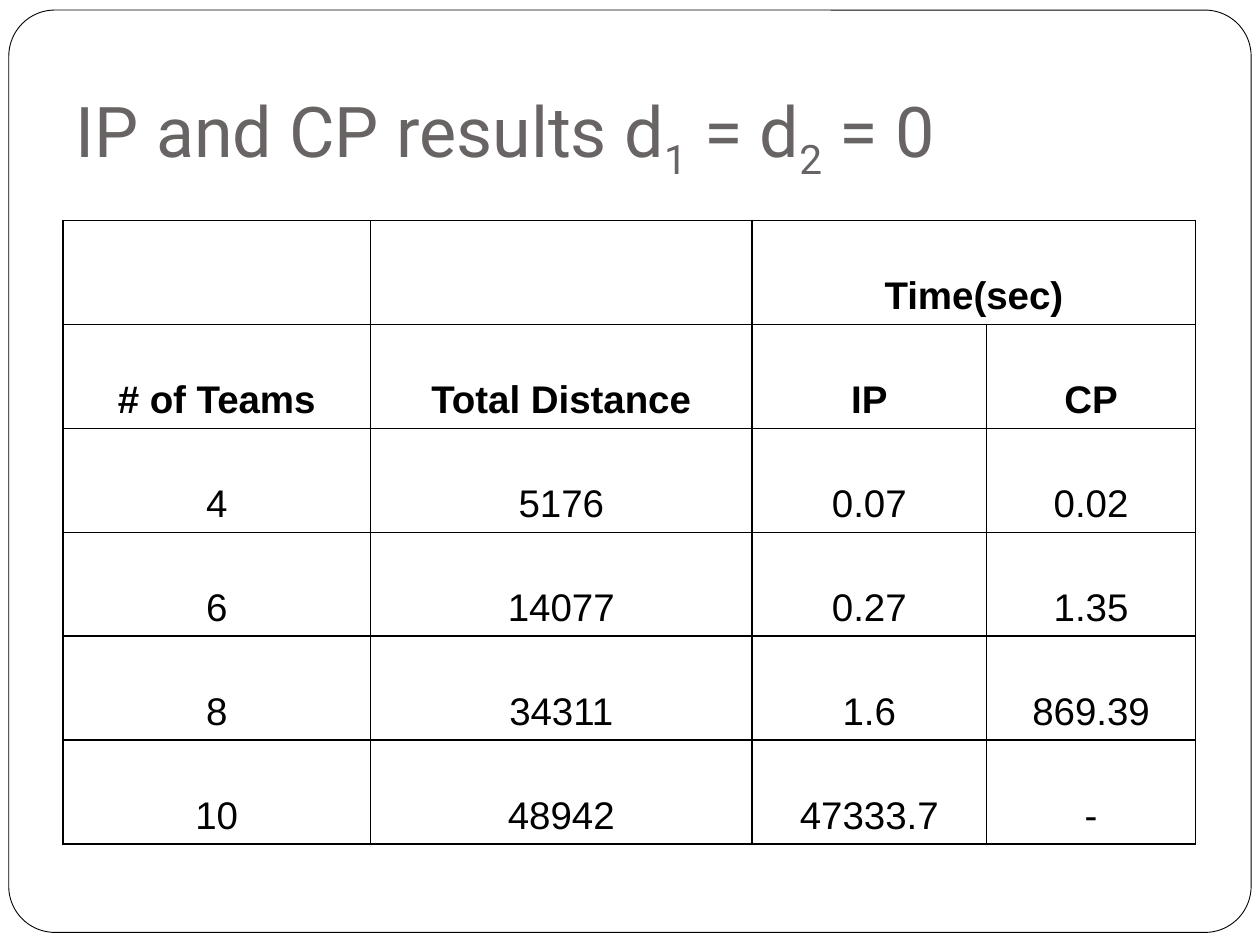
from typing import NamedTuple

from lxml import etree
from pptx import Presentation
from pptx.dml.color import RGBColor
from pptx.enum import shapes, text
from pptx.oxml import ns
from pptx.util import Inches, Pt

BLACK = RGBColor(0x00, 0x00, 0x00)
WHITE = RGBColor(0xFF, 0xFF, 0xFF)
GREY = RGBColor(0x69, 0x64, 0x64)


class Part(NamedTuple):
    words: str
    sub: bool = False


class Row(NamedTuple):
    cells: tuple[str, ...]
    bold: bool = False


TITLE = (
    Part("IP and CP results d"), Part("1", True),
    Part(" = d"), Part("2", True), Part(" = 0"),
)
WIDTHS = (2.44, 3.03, 1.86, 1.66)
ROWS = (
    Row(("", "", "Time(sec)", ""), True),
    Row(("# of Teams", "Total Distance", "IP", "CP"), True),
    Row(("4", "5176", "0.07", "0.02")),
    Row(("6", "14077", "0.27", "1.35")),
    Row(("8", "34311", "1.6", "869.39")),
    Row(("10", "48942", "47333.7", "-")),
)


def add_frame(slide) -> None:
    """Draw the rounded page border behind everything else."""
    frame = slide.shapes.add_shape(
        shapes.MSO_SHAPE.ROUNDED_RECTANGLE,
        Inches(0.07), Inches(0.08), Inches(9.86), Inches(7.32))
    frame.adjustments[0] = 0.05
    frame.shadow.inherit = False
    frame.fill.solid()
    frame.fill.fore_color.rgb = WHITE
    frame.line.color.rgb = BLACK
    frame.line.width = Pt(0.5)
    slide.shapes.element.insert(2, frame.element)


def set_title(title, parts: tuple[Part, ...]) -> None:
    title.left, title.top = Inches(0.5), Inches(0.3)
    title.width, title.height = Inches(9), Inches(1.25)
    body = title.text_frame
    body.auto_size = text.MSO_AUTO_SIZE.NONE
    body.vertical_anchor = text.MSO_ANCHOR.BOTTOM
    body.margin_bottom = Inches(0.1)
    para = body.paragraphs[0]
    para.alignment = text.PP_ALIGN.LEFT
    for part in parts:
        run = para.add_run()
        run.text = part.words
        run.font.name = "Roboto"
        run.font.size = Pt(40)
        run.font.color.rgb = GREY
        if part.sub:
            run.font._element.set("baseline", "-25000")


def add_lines(cell) -> None:
    """Give a cell a thin black line on all four sides."""
    props = cell._tc.get_or_add_tcPr()
    for side in ("lnL", "lnR", "lnT", "lnB"):
        line = etree.SubElement(props, ns.qn(f"a:{side}"), w=str(Pt(1)))
        fill = etree.SubElement(line, ns.qn("a:solidFill"))
        etree.SubElement(fill, ns.qn("a:srgbClr"), val=str(BLACK))


def fill_cell(cell, words: str, bold: bool) -> None:
    add_lines(cell)
    cell.fill.background()
    cell.vertical_anchor = text.MSO_ANCHOR.BOTTOM
    if not words:
        return
    para = cell.text_frame.paragraphs[0]
    para.alignment = text.PP_ALIGN.CENTER
    indent = Inches(0.38)
    props = para._p.get_or_add_pPr()
    props.set("marL", str(indent))
    props.set("indent", str(-indent))
    run = para.add_run()
    run.text = words
    run.font.name = "Arial"
    run.font.size = Pt(22)
    run.font.bold = bold
    run.font.color.rgb = BLACK


def add_grid(slide, rows: tuple[Row, ...]) -> None:
    grid = slide.shapes.add_table(
        len(rows), len(WIDTHS),
        Inches(0.5), Inches(1.75), Inches(9), Inches(4.95)).table
    grid.first_row = grid.horz_banding = False
    for col, width in zip(grid.columns, WIDTHS):
        col.width = Inches(width)
    for r, row in enumerate(rows):
        for c, words in enumerate(row.cells):
            fill_cell(grid.cell(r, c), words, row.bold)
    grid.cell(0, 2).merge(grid.cell(0, 3))


def main() -> None:
    deck = Presentation()
    deck.slide_width, deck.slide_height = Inches(10), Inches(7.5)
    slide = deck.slides.add_slide(deck.slide_layouts[5])
    add_frame(slide)
    set_title(slide.shapes.title, TITLE)
    add_grid(slide, ROWS)
    deck.save("out.pptx")


if __name__ == "__main__":
    main()
